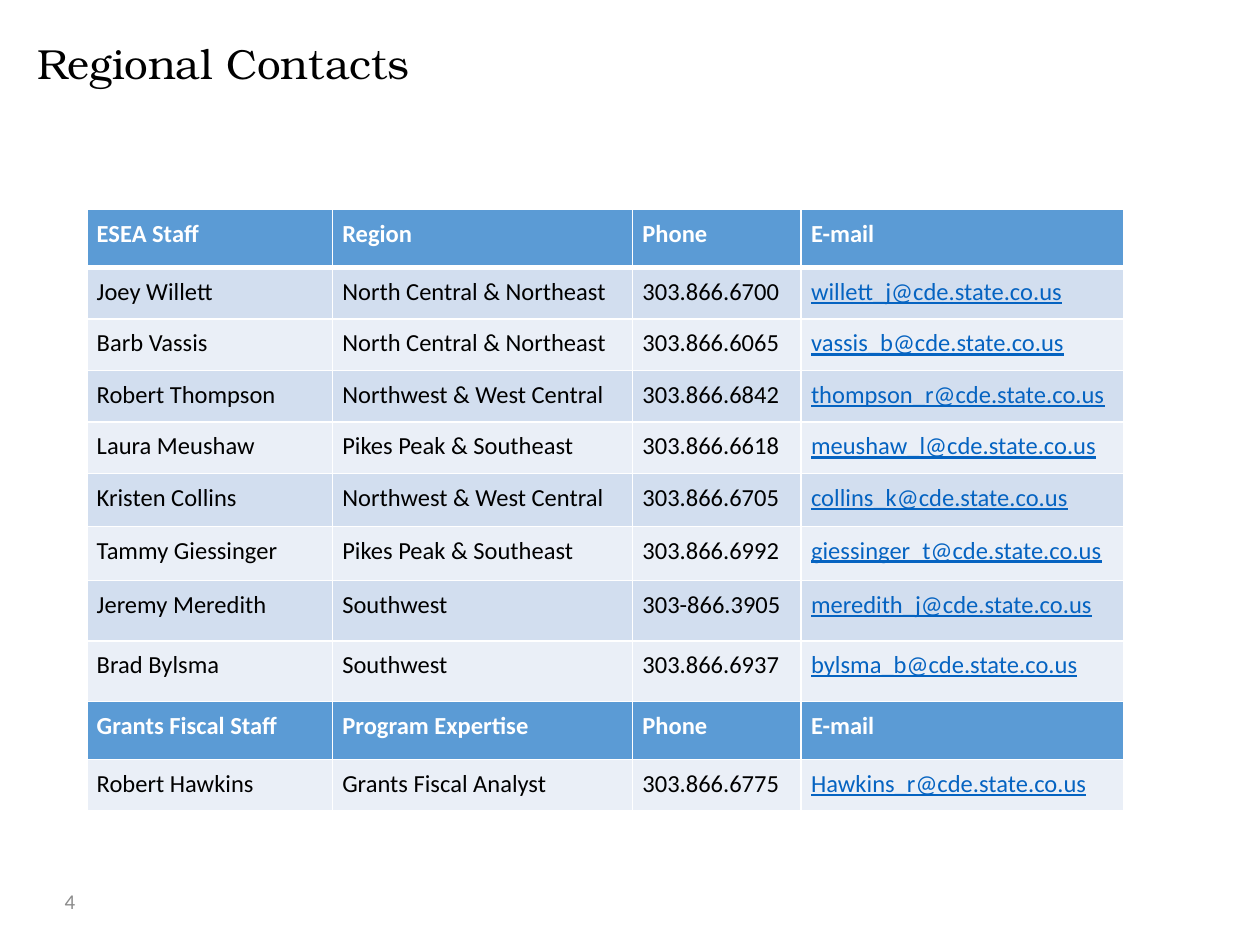
import pptx
import pptx.dml.color
import pptx.enum.text
import pptx.oxml
import pptx.oxml.ns
import pptx.util
from pptx.util import Cm

COLORS = {
    "text": "000000",
    "header": "5B9BD5",
    "header_text": "FFFFFF",
    "band_odd": "D2DEEF",
    "band_even": "EAEFF7",
    "link": "0563C1",
    "border": "FFFFFF",
    "number": "8C8C8C",
}
BODY_FONT = "Calibri"
TITLE_FONT = "TeX Gyre Bonum"

CONTACTS = [
    ("ESEA Staff", "Region", "Phone", "E-mail"),
    ("Joey Willett", "North Central & Northeast", "303.866.6700", "willett_j@cde.state.co.us"),
    ("Barb Vassis", "North Central & Northeast", "303.866.6065", "vassis_b@cde.state.co.us"),
    ("Robert Thompson", "Northwest & West Central", "303.866.6842", "thompson_r@cde.state.co.us"),
    ("Laura Meushaw", "Pikes Peak & Southeast", "303.866.6618", "meushaw_l@cde.state.co.us"),
    ("Kristen Collins", "Northwest & West Central", "303.866.6705", "collins_k@cde.state.co.us"),
    ("Tammy Giessinger", "Pikes Peak & Southeast", "303.866.6992", "giessinger_t@cde.state.co.us"),
    ("Jeremy Meredith", "Southwest", "303-866.3905", "meredith_j@cde.state.co.us"),
    ("Brad Bylsma", "Southwest", "303.866.6937", "bylsma_b@cde.state.co.us"),
    ("Grants Fiscal Staff", "Program Expertise", "Phone", "E-mail"),
    ("Robert Hawkins", "Grants Fiscal Analyst", "303.866.6775", "Hawkins_r@cde.state.co.us"),
]
HEADER_ROWS = (0, 9)
EMAIL_COLUMN = 3
COLUMN_WIDTHS = (4.95, 6.05, 3.4, 6.5)
ROW_HEIGHTS = (1.17, 1.04, 1.04, 1.04, 1.04, 1.06, 1.09, 1.22, 1.22, 1.17, 1.04)


def style_run(run, size, color, font=BODY_FONT, bold=False, underline=False):
    run.font.name = font
    run.font.size = pptx.util.Pt(size)
    run.font.bold = bold
    run.font.underline = underline
    run.font.color.rgb = pptx.dml.color.RGBColor.from_string(COLORS[color])


def set_borders(cell, top=1, bottom=1):
    """White borders; widths in points."""
    properties = cell._tc.get_or_add_tcPr()
    for side, width in (("L", 1), ("R", 1), ("T", top), ("B", bottom)):
        properties.append(pptx.oxml.parse_xml(
            f'<a:ln{side} {pptx.oxml.ns.nsdecls("a")} w="{pptx.util.Pt(width)}">'
            f'<a:solidFill><a:srgbClr val="{COLORS["border"]}"/></a:solidFill>'
            f'</a:ln{side}>'))


def add_title(slide, left, top, width, height):
    frame = slide.shapes.add_textbox(left, top, width, height).text_frame
    frame.word_wrap = True
    frame.margin_left = frame.margin_right = frame.margin_top = frame.margin_bottom = 0
    frame.text = "Regional Contacts"
    style_run(frame.paragraphs[0].runs[0], 24, "text", TITLE_FONT)


def add_slide_number(slide, left, top, width, height):
    frame = slide.shapes.add_textbox(left, top, width, height).text_frame
    frame.word_wrap = True
    frame.vertical_anchor = pptx.enum.text.MSO_ANCHOR.MIDDLE
    frame.text = "4"
    frame.paragraphs[0].alignment = pptx.enum.text.PP_ALIGN.CENTER
    style_run(frame.paragraphs[0].runs[0], 12, "number")


def fill_contact_cell(cell, text, row, column):
    is_header = row in HEADER_ROWS
    is_email = column == EMAIL_COLUMN and not is_header
    if is_header:
        background, color = "header", "header_text"
    else:
        background = "band_odd" if row % 2 else "band_even"
        color = "link" if is_email else "text"

    # The heavy rule runs between the first header and the first contact
    set_borders(cell, top=3 if row == 1 else 1, bottom=3 if row == 0 else 1)
    cell.fill.solid()
    cell.fill.fore_color.rgb = pptx.dml.color.RGBColor.from_string(COLORS[background])

    cell.margin_left = cell.margin_right = Cm(0.2)
    cell.margin_top = cell.margin_bottom = Cm(0.1)
    cell.text_frame.text = text
    paragraph = cell.text_frame.paragraphs[0]
    paragraph.line_spacing = 1.15
    style_run(paragraph.runs[0], 14, color, bold=is_header, underline=is_email)


def add_contacts_table(slide, left, top):
    contacts = slide.shapes.add_table(
        len(CONTACTS), len(COLUMN_WIDTHS), left, top,
        Cm(sum(COLUMN_WIDTHS)), Cm(sum(ROW_HEIGHTS))).table
    contacts.horz_banding = False
    for column, width in zip(contacts.columns, COLUMN_WIDTHS):
        column.width = Cm(width)
    for row, height in zip(contacts.rows, ROW_HEIGHTS):
        row.height = Cm(height)
    for row, entry in enumerate(CONTACTS):
        for column, text in enumerate(entry):
            fill_contact_cell(contacts.cell(row, column), text, row, column)


def main():
    deck = pptx.Presentation()
    deck.slide_width, deck.slide_height = Cm(25.4), Cm(19.05)
    slide = deck.slides.add_slide(deck.slide_layouts[6])

    add_title(slide, Cm(0.76), Cm(0.76), Cm(21.9), Cm(1.98))
    add_slide_number(slide, Cm(0.76), Cm(17.65), Cm(1.3), Cm(1.02))
    add_contacts_table(slide, Cm(1.75), Cm(4.22))

    deck.save("out.pptx")


if __name__ == "__main__":
    main()
